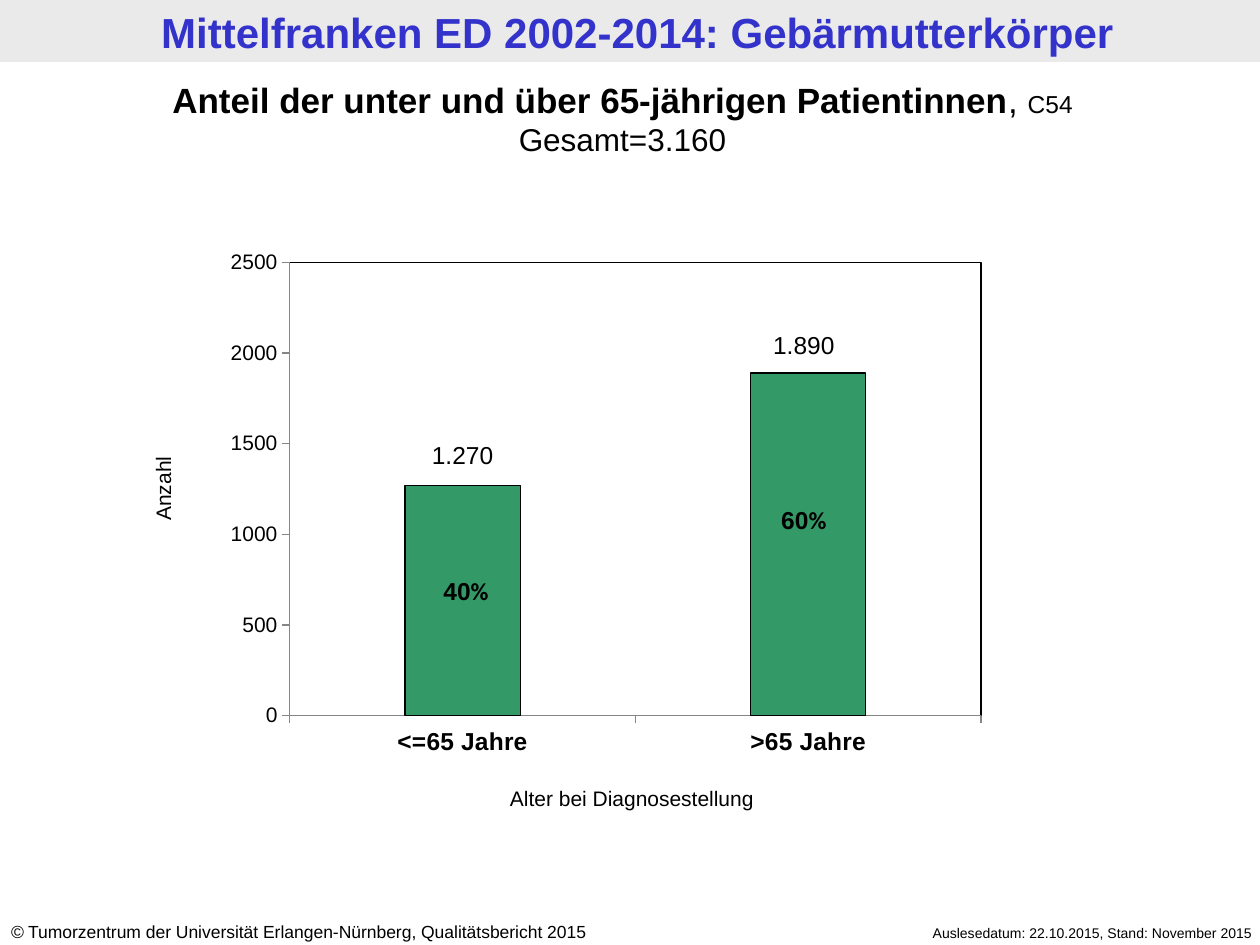
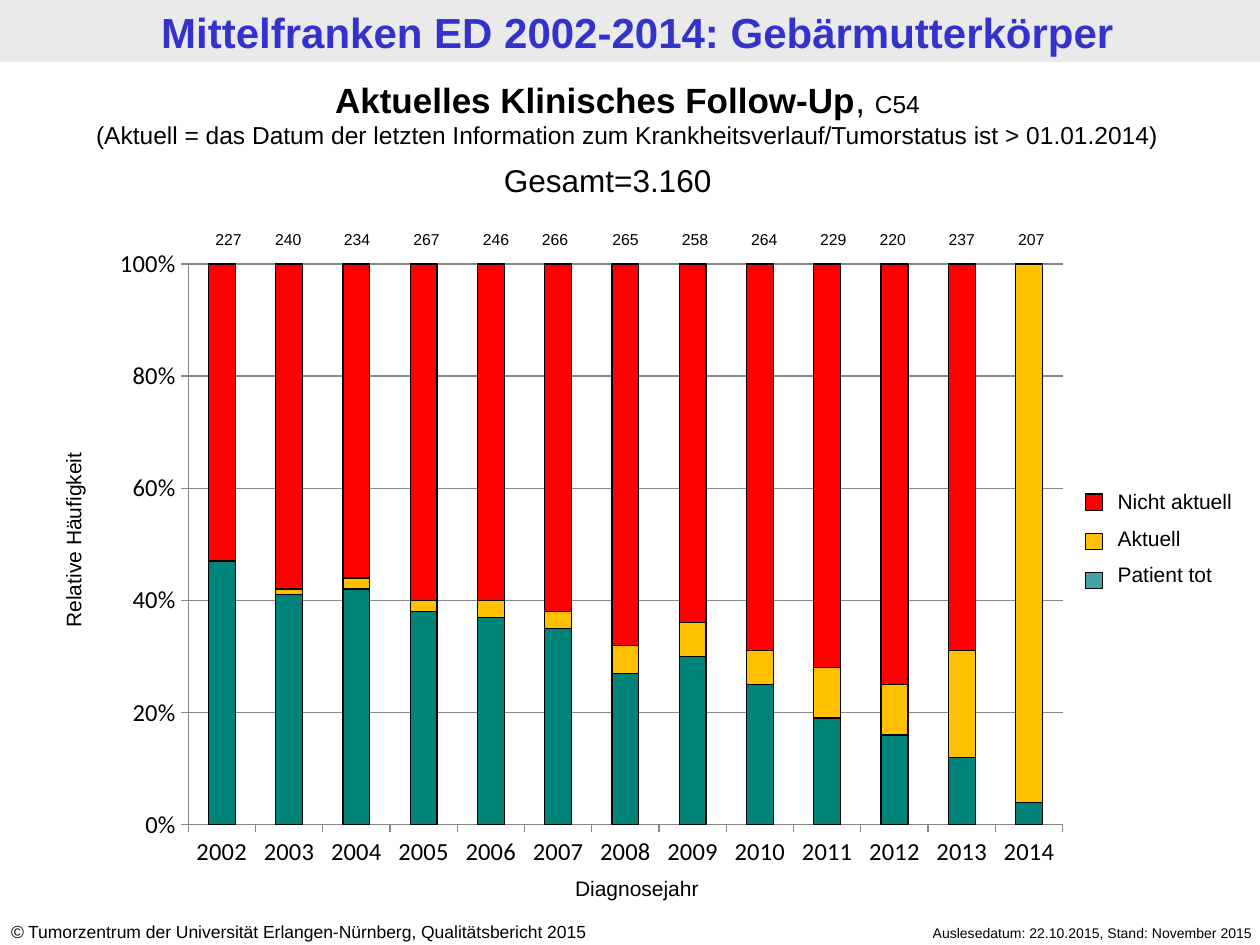
from dataclasses import dataclass

from lxml import etree
from pptx import Presentation
from pptx.chart.data import CategoryChartData
from pptx.dml.color import RGBColor
from pptx.enum.chart import XL_CHART_TYPE, XL_TICK_LABEL_POSITION, XL_TICK_MARK
from pptx.enum.shapes import MSO_SHAPE
from pptx.enum.text import MSO_AUTO_SIZE, PP_ALIGN
from pptx.oxml import parse_xml
from pptx.oxml.ns import nsdecls, qn
from pptx.util import Cm, Pt


@dataclass(frozen=True)
class Theme:
    font: str = "Arial"
    number_font: str = "Calibri"
    text: str = "000000"
    title: str = "3333CC"
    band: str = "EAEAEA"
    axis: str = "868686"
    age_bar: str = "339966"
    dead: str = "008378"
    dead_key: str = "008380"
    current: str = "FFC000"
    outdated: str = "FF0000"
    title_size: float = 24
    heading_size: float = 20
    total_size: float = 18
    value_size: float = 14
    label_size: float = 12
    copyright_size: float = 10
    count_size: float = 9
    date_size: float = 8
    outline: float = 0.75


THEME = Theme()
TOTAL = "Gesamt=3.160"
AGE_GROUPS = ["<=65 Jahre", ">65 Jahre"]
AGE_COUNTS = [1270, 1890]
YEARS = [str(year) for year in range(2002, 2015)]
FOLLOW_UP = [
    ("Patient tot", [47, 41, 42, 38, 37, 35, 27, 30, 25, 19, 16, 12, 4], THEME.dead),
    ("Aktuell", [0, 1, 2, 2, 3, 3, 5, 6, 6, 9, 9, 19, 96], THEME.current),
    ("Nicht aktuell", [53, 58, 56, 60, 60, 62, 68, 64, 69, 72, 75, 69, 0], THEME.outdated),
]
YEAR_COUNTS = [227, 240, 234, 267, 246, 266, 265, 258, 264, 229, 220, 237, 207]
COUNT_LEFTS = [3.91, 5.11, 6.5, 7.9, 9.3, 10.49, 11.91, 13.31, 14.71, 16.1, 17.3, 18.69, 20.09]


def set_values(target, values):
    for name, value in values.items():
        setattr(target, name, value)


def set_font(font, size, color=THEME.text, **values):
    set_values(font, {"name": THEME.font, "size": Pt(size), "bold": False, **values})
    font.color.rgb = RGBColor.from_string(color)


def set_outline(line, color=THEME.text):
    line.color.rgb = RGBColor.from_string(color)
    line.width = Pt(THEME.outline)


def set_fill(fill, color):
    fill.solid()
    fill.fore_color.rgb = RGBColor.from_string(color)


def add_text(slide, box, paragraphs, align=PP_ALIGN.CENTER, rotation=0, gap=0):
    label = slide.shapes.add_textbox(*map(Cm, box))
    label.rotation = rotation
    frame = label.text_frame
    set_values(frame, {"word_wrap": True, "auto_size": MSO_AUTO_SIZE.SHAPE_TO_FIT_TEXT})
    for index, runs in enumerate(paragraphs):
        paragraph = frame.add_paragraph() if index else frame.paragraphs[0]
        paragraph.alignment = align
        if index and gap:
            paragraph.space_before = Pt(gap)
        for wording, size, values in runs:
            run = paragraph.add_run()
            run.text = wording
            set_font(run.font, size, **values)


def add_label(slide, box, wording, size, align=PP_ALIGN.CENTER, rotation=0, **values):
    add_text(slide, box, [[(wording, size, values)]], align, rotation)


def add_box(slide, box, color, outlined=False):
    rectangle = slide.shapes.add_shape(MSO_SHAPE.RECTANGLE, *map(Cm, box))
    rectangle.shadow.inherit = False
    set_fill(rectangle.fill, color)
    if outlined:
        set_outline(rectangle.line)
    else:
        rectangle.line.fill.background()
    return rectangle


def add_heading(slide, box, topic, second_line, second_size):
    add_text(slide, box, [
        [(topic, THEME.heading_size, {"bold": True}),
         (", ", THEME.heading_size, {}),
         ("C54", THEME.value_size, {})],
        [(second_line, second_size, {})],
    ])


def add_framed_slide(deck):
    slide = deck.slides.add_slide(deck.slide_layouts[6])
    add_box(slide, (0, 0, 25.4, 1.25), THEME.band)
    add_label(slide, (0.15, 0, 25.4, 1.25), "Mittelfranken ED 2002-2014: Gebärmutterkörper",
              THEME.title_size, color=THEME.title, bold=True)
    add_label(slide, (16.89, 18.52, 8.61, 0.61),
              "Auslesedatum: 22.10.2015, Stand: November 2015", THEME.date_size, PP_ALIGN.RIGHT)
    add_text(slide, (-0.03, 18.44, 13.31, 0.69), [[
        ("©", THEME.copyright_size, {"italic": True}),
        (" Tumorzentrum der Universität Erlangen-Nürnberg, Qualitätsbericht 2015",
         THEME.copyright_size, {}),
    ]], PP_ALIGN.LEFT)
    return slide


def place_plot(chart, x, y, w, h, framed):
    plot_area = chart.element.find(".//" + qn("c:plotArea"))
    for automatic in plot_area.findall(qn("c:layout")):
        plot_area.remove(automatic)
    places = "".join(f'<c:{tag} val="{value}"/>' for tag, value in zip("xywh", (x, y, w, h)))
    plot_area.insert(0, parse_xml(
        f'<c:layout {nsdecls("c")}><c:manualLayout><c:layoutTarget val="inner"/>'
        f'<c:xMode val="edge"/><c:yMode val="edge"/>{places}</c:manualLayout></c:layout>'))
    border = (f'<a:ln w="{Pt(THEME.outline)}"><a:solidFill><a:srgbClr val="{THEME.text}"/>'
              '</a:solidFill></a:ln>' if framed else '<a:ln><a:noFill/></a:ln>')
    plot_area.append(parse_xml(
        f'<c:spPr {nsdecls("c", "a")}><a:noFill/>{border}</c:spPr>'))


def add_columns(slide, kind, box, plot_box, categories, series, gap, value_axis,
                category_font, value_font, number_format="General", framed=False):
    data = CategoryChartData()
    data.categories = categories
    for name, values, _ in series:
        data.add_series(name, values)
    chart = slide.shapes.add_chart(kind, *map(Cm, box), data).chart
    set_values(chart, {"has_title": False, "has_legend": False})
    set_font(chart.font, THEME.total_size, name=THEME.number_font)
    plot = chart.plots[0]
    set_values(plot, {"gap_width": gap, "overlap": 100, "vary_by_categories": False})
    for bars, (_, _, color) in zip(plot.series, series):
        set_fill(bars.format.fill, color)
        set_outline(bars.format.line)
    for axis, font in ((chart.category_axis, category_font), (chart.value_axis, value_font)):
        set_values(axis, {
            "major_tick_mark": XL_TICK_MARK.OUTSIDE,
            "minor_tick_mark": XL_TICK_MARK.NONE,
            "tick_label_position": XL_TICK_LABEL_POSITION.LOW,
            "has_major_gridlines": False,
        })
        set_font(axis.tick_labels.font, **font)
        set_outline(axis.format.line, THEME.axis)
    set_values(chart.value_axis, {"minimum_scale": 0, **value_axis})
    set_values(chart.value_axis.tick_labels,
               {"number_format": number_format, "number_format_is_linked": False})
    if chart.value_axis.has_major_gridlines:
        set_outline(chart.value_axis.major_gridlines.format.line, THEME.axis)
    place_plot(chart, *plot_box, framed)


def add_follow_up_key(slide):
    add_text(slide, (22.28, 9.73, 3.61, 2.31),
             [[(name, THEME.label_size, {})] for name, _, _ in reversed(FOLLOW_UP)],
             PP_ALIGN.LEFT, gap=6.5)
    for row, color in enumerate((THEME.outdated, THEME.current, THEME.dead_key)):
        swatch = add_box(slide, (21.89, 9.96 + row * 0.79, 0.33, 0.33), color, outlined=True)
    fill_color = swatch.element.find(".//" + qn("a:srgbClr"))
    etree.SubElement(fill_color, qn("a:alpha"), val="74000")


def build_age_slide(deck):
    slide = add_framed_slide(deck)
    add_columns(
        slide, XL_CHART_TYPE.COLUMN_STACKED, (3.84, 3.61, 17.73, 11.84),
        (0.113, 0.142, 0.786, 0.772), AGE_GROUPS,
        [("Anzahl", AGE_COUNTS, THEME.age_bar)], 200,
        {"maximum_scale": 2500, "major_unit": 500},
        {"size": THEME.value_size, "bold": True}, {"size": THEME.label_size}, framed=True)
    add_heading(slide, (0, 1.45, 25.1, 1.88),
                "Anteil der unter und über 65-jährigen Patientinnen", TOTAL, THEME.total_size)
    for left, top, share in ((8.1, 11.48, "40"), (14.91, 10.06, "60")):
        add_text(slide, (left, top, 2.59, 0.86), [[
            (share, THEME.value_size, {"bold": True}),
            ("%", THEME.value_size, {"bold": True, "name": THEME.number_font}),
        ]])
    for left, top, count in ((8.03, 8.74, "1.270"), (14.91, 6.53, "1.890")):
        add_label(slide, (left, top, 2.59, 0.86), count, THEME.value_size)
    add_label(slide, (8.51, 15.72, 8.46, 0.76), "Alter bei Diagnosestellung", THEME.label_size)
    add_label(slide, (-0.03, 9.47, 6.63, 0.76), "Anzahl", THEME.label_size, rotation=270)


def build_follow_up_slide(deck):
    slide = add_framed_slide(deck)
    year_font = {"size": THEME.value_size, "name": THEME.number_font}
    add_columns(
        slide, XL_CHART_TYPE.COLUMN_STACKED_100, (2.01, 4.75, 19.81, 12.98),
        (0.09, 0.044, 0.89, 0.871), YEARS, FOLLOW_UP, 150,
        {"maximum_scale": 1, "major_unit": 0.2, "has_major_gridlines": True},
        year_font, year_font, "0%")
    add_label(slide, (-1.57, 10.49, 6.12, 0.79), "Relative Häufigkeit",
              THEME.label_size, rotation=270)
    add_label(slide, (9.98, 17.53, 5.72, 0.79), "Diagnosejahr", THEME.label_size)
    add_follow_up_key(slide)
    add_heading(
        slide, (-0.1, 1.45, 25.5, 1.7), "Aktuelles Klinisches Follow-Up",
        "(Aktuell = das Datum der letzten Information zum Krankheitsverlauf/Tumorstatus"
        " ist > 01.01.2014)", THEME.value_size)
    add_label(slide, (9.91, 3.12, 5.59, 1.02), TOTAL, THEME.total_size, PP_ALIGN.LEFT)
    for left, count in zip(COUNT_LEFTS, YEAR_COUNTS):
        add_label(slide, (left, 4.5, 1.4, 0.64), str(count), THEME.count_size)


def main():
    deck = Presentation()
    set_values(deck, {"slide_width": Cm(25.4), "slide_height": Cm(19.05)})
    build_age_slide(deck)
    build_follow_up_slide(deck)
    deck.save("out.pptx")


if __name__ == "__main__":
    main()
